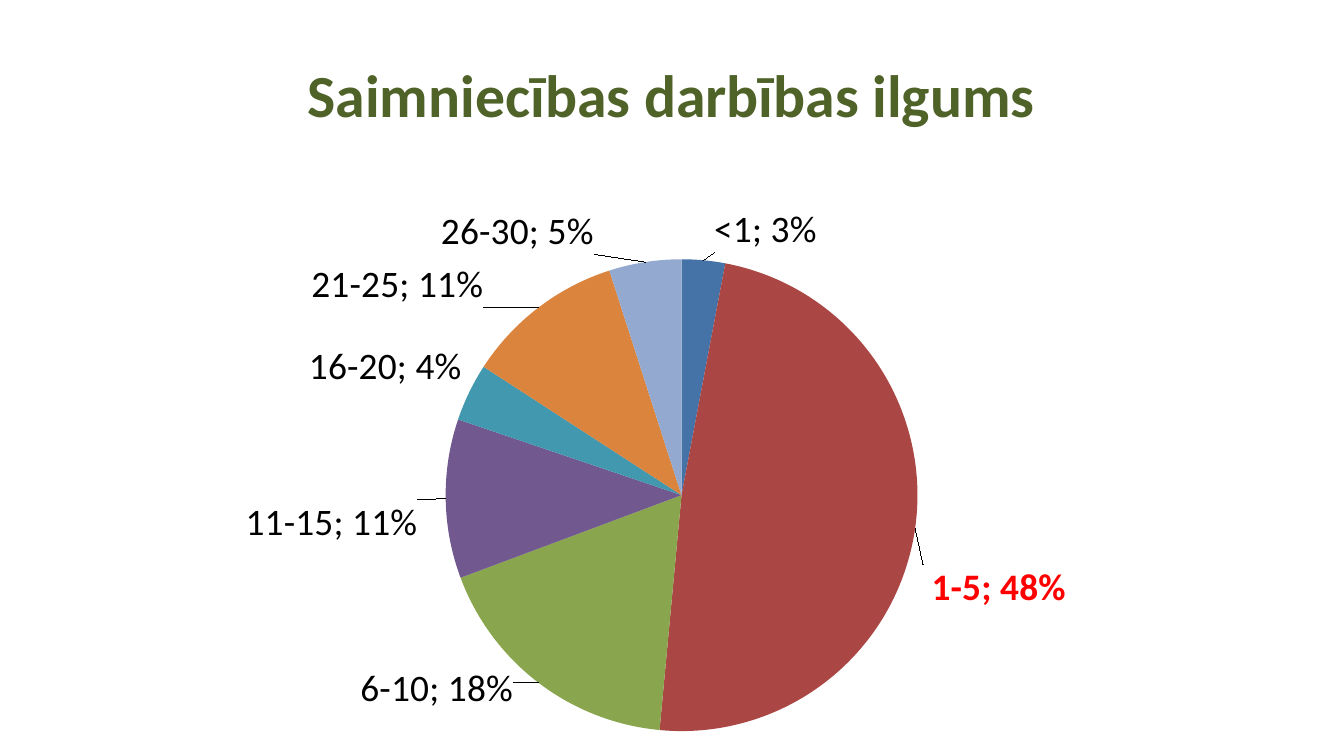
from lxml import etree
from pptx import Presentation
from pptx.chart.data import CategoryChartData
from pptx.dml.color import RGBColor as RGB
from pptx.enum.chart import XL_CHART_TYPE as CT, XL_LABEL_POSITION as POS
from pptx.enum.text import MSO_ANCHOR as ANCHOR, PP_ALIGN as ALIGN
from pptx.oxml.ns import qn
from pptx.util import Pt

COLORS = {"title": "4F6228", "text": "000000", "accent": "FF0000"}

# category, value, slice colour, label shift (fractions of the chart's width and height)
SLICES = [
    ("<1", 3, "4572A7", (0.01, 0)),
    (" 1-5", 49, "AA4643", (0, 0.06)),
    (" 6-10", 18, "89A54E", (-0.02, -0.04)),
    (" 11-15", 11, "71588F", (-0.02, 0.04)),
    (" 16-20", 4, "4198AF", None),
    (" 21-25", 11, "DB843D", (-0.05, 0.01)),
    (" 26-30", 5, "93A9CF", (-0.05, 0)),
]
PLOT_AREA = {"x": 0.28, "y": 0.12, "w": 0.48, "h": 0.8}


def add_layout(parent, values, inner=False):
    """Return a manual chart layout placed inside parent."""
    layout = parent.find(qn("c:layout"))
    if layout is None:
        layout = etree.Element(qn("c:layout"))
        parent.insert(1 if parent.tag == qn("c:dLbl") else 0, layout)
    manual = etree.SubElement(layout, qn("c:manualLayout"))
    settings = list(values.items())
    if inner:
        settings = [("layoutTarget", "inner"), ("xMode", "edge"), ("yMode", "edge")] + settings
    for name, value in settings:
        etree.SubElement(manual, qn(f"c:{name}")).set("val", str(value))


def show_name_and_percent(labels):
    """Make a label element show category and percentage."""
    for name, on in (("showVal", 0), ("showCatName", 1), ("showPercent", 1)):
        labels.find(qn(f"c:{name}")).set("val", str(on))
    separator = etree.Element(qn("c:separator"))
    separator.text = "; "
    last = labels.find(qn("c:showBubbleSize"))
    if last is None:
        last = labels.find(qn("c:showPercent"))
    last.addnext(separator)


class Deck:
    font = "Calibri"
    label_size = Pt(20)

    def __init__(self, width, height):
        self.prs = Presentation()
        self.prs.slide_width, self.prs.slide_height = width, height
        self.s = self.prs.slides.add_slide(self.prs.slide_layouts[6])

    def style(self, font, size, color, bold=False):
        font.name, font.size, font.bold = self.font, size, bold
        font.color.rgb = RGB.from_string(COLORS[color])

    def title(self, text, x, y, w, h):
        tf = self.s.shapes.add_textbox(x, y, w, h).text_frame
        tf.word_wrap = True
        tf.vertical_anchor = ANCHOR.MIDDLE
        p = tf.paragraphs[0]
        p.text, p.alignment = text, ALIGN.CENTER
        self.style(p.font, Pt(32), "title", True)

    def pie(self, slices, custom, x, y, w, h):
        data = CategoryChartData()
        data.categories = [name for name, *_ in slices]
        data.add_series("Series 1", [value for _, value, *_ in slices])
        chart = self.s.shapes.add_chart(CT.PIE, x, y, w, h, data).chart
        chart.has_legend = chart.has_title = False
        self.style(chart.font, Pt(10), "text")
        plot = chart.plots[0]
        plot.vary_by_categories = True
        series = plot.series[0]

        # Default labels
        labels = series.data_labels
        labels.position = POS.OUTSIDE_END
        self.style(labels.font, self.label_size, "text")

        # Slice colours and single labels
        for i, (_, _, color, shift) in enumerate(slices):
            point = series.points[i]
            point.format.fill.solid()
            point.format.fill.fore_color.rgb = RGB.from_string(color)
            if shift is None:
                continue
            label = point.data_label
            if i in custom:
                p = label.text_frame.paragraphs[0]
                r = p.add_run()
                r.text = custom[i]
                self.style(r.font, self.label_size, "accent", True)
            else:
                self.style(label.font, self.label_size, "text")
            label.position = POS.OUTSIDE_END

        # Label content and places
        root = chart.element
        show_name_and_percent(next(root.iter(qn("c:dLbls"))))
        for label in root.iter(qn("c:dLbl")):
            show_name_and_percent(label)
            dx, dy = slices[int(label.find(qn("c:idx")).get("val"))][3]
            add_layout(label, {"x": dx, "y": dy})
        add_layout(next(root.iter(qn("c:plotArea"))), PLOT_AREA, inner=True)


def main():
    deck = Deck(Pt(720), Pt(405))
    deck.title("Saimniecības darbības ilgums", Pt(36), Pt(16.5), Pt(648), Pt(67.5))
    deck.pie(SLICES, {1: " 1-5; 48%"}, Pt(88), Pt(101), Pt(533), Pt(316))
    deck.prs.save("out.pptx")


if __name__ == "__main__":
    main()
